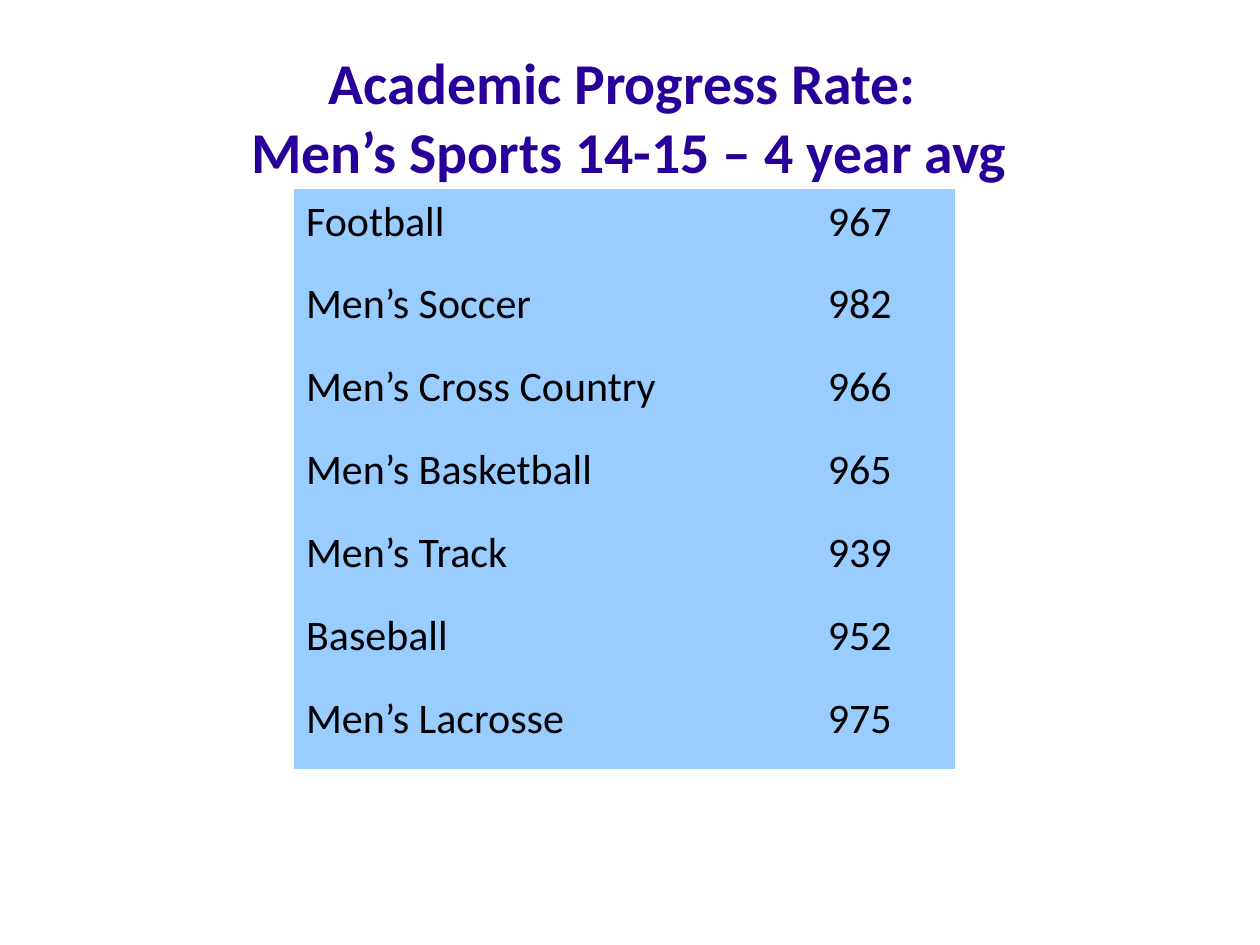
from pptx import Presentation
from pptx.dml.color import RGBColor
from pptx.enum.text import MSO_ANCHOR, PP_ALIGN
from pptx.oxml.ns import qn
from pptx.util import Cm, Pt

TITLE = ["Academic Progress Rate: ", "Men’s Sports 14-15 – 4 year avg"]
RATES = [
    ("Football", "967"),
    ("Men’s Soccer", "982"),
    ("Men’s Cross Country", "966"),
    ("Men’s Basketball", "965"),
    ("Men’s Track", "939"),
    ("Baseball", "952"),
    ("Men’s Lacrosse", "975"),
]

INDIGO = RGBColor(0x28, 0x00, 0x99)
SKY = RGBColor(0x99, 0xCC, 0xFF)
BLACK = RGBColor(0x00, 0x00, 0x00)
FONT = "Calibri"
NO_STYLE_NO_GRID = "{2D5ABB26-0587-4C30-8999-92F81FD0307C}"

COLUMN_WIDTHS = [Cm(10.52), Cm(2.82)]
ROW_HEIGHT = Cm(1.67)


def write(tf, lines, size, color, bold=False, align=PP_ALIGN.LEFT, spacing=None):
    """Fill a text frame with one paragraph per line."""
    for i, line in enumerate(lines):
        p = tf.paragraphs[0] if i == 0 else tf.add_paragraph()
        p.alignment = align
        p.line_spacing = spacing
        r = p.add_run()
        r.text = line
        r.font.name = FONT
        r.font.size = Pt(size)
        r.font.bold = bold
        r.font.color.rgb = color


def add_title(slide):
    tf = slide.shapes.add_textbox(Cm(1.27), Cm(0.86), Cm(22.83), Cm(2.95)).text_frame
    tf.word_wrap = True
    tf.vertical_anchor = MSO_ANCHOR.MIDDLE
    tf.margin_left = tf.margin_right = tf.margin_top = tf.margin_bottom = 0
    write(tf, TITLE, 33, INDIGO, bold=True, align=PP_ALIGN.CENTER)


def add_rates_table(slide):
    frame = slide.shapes.add_table(
        len(RATES), len(COLUMN_WIDTHS), Cm(5.92), Cm(3.81),
        sum(COLUMN_WIDTHS), ROW_HEIGHT * len(RATES))
    table = frame.table
    table.first_row = table.horz_banding = False
    next(frame.element.iter(qn("a:tableStyleId"))).text = NO_STYLE_NO_GRID
    for column, width in zip(table.columns, COLUMN_WIDTHS):
        column.width = width
    for row, values in zip(table.rows, RATES):
        row.height = ROW_HEIGHT
        for cell, value in zip(row.cells, values):
            cell.fill.solid()
            cell.fill.fore_color.rgb = SKY
            cell.margin_left = cell.margin_right = Cm(0.25)
            cell.margin_top, cell.margin_bottom = Cm(0.18), Cm(0.13)
            write(cell.text_frame, [value], 24, BLACK, spacing=0.93)


def main():
    prs = Presentation()
    prs.slide_width, prs.slide_height = Cm(25.4), Cm(19.05)
    slide = prs.slides.add_slide(prs.slide_layouts[6])
    add_title(slide)
    add_rates_table(slide)
    prs.save("out.pptx")


if __name__ == "__main__":
    main()
